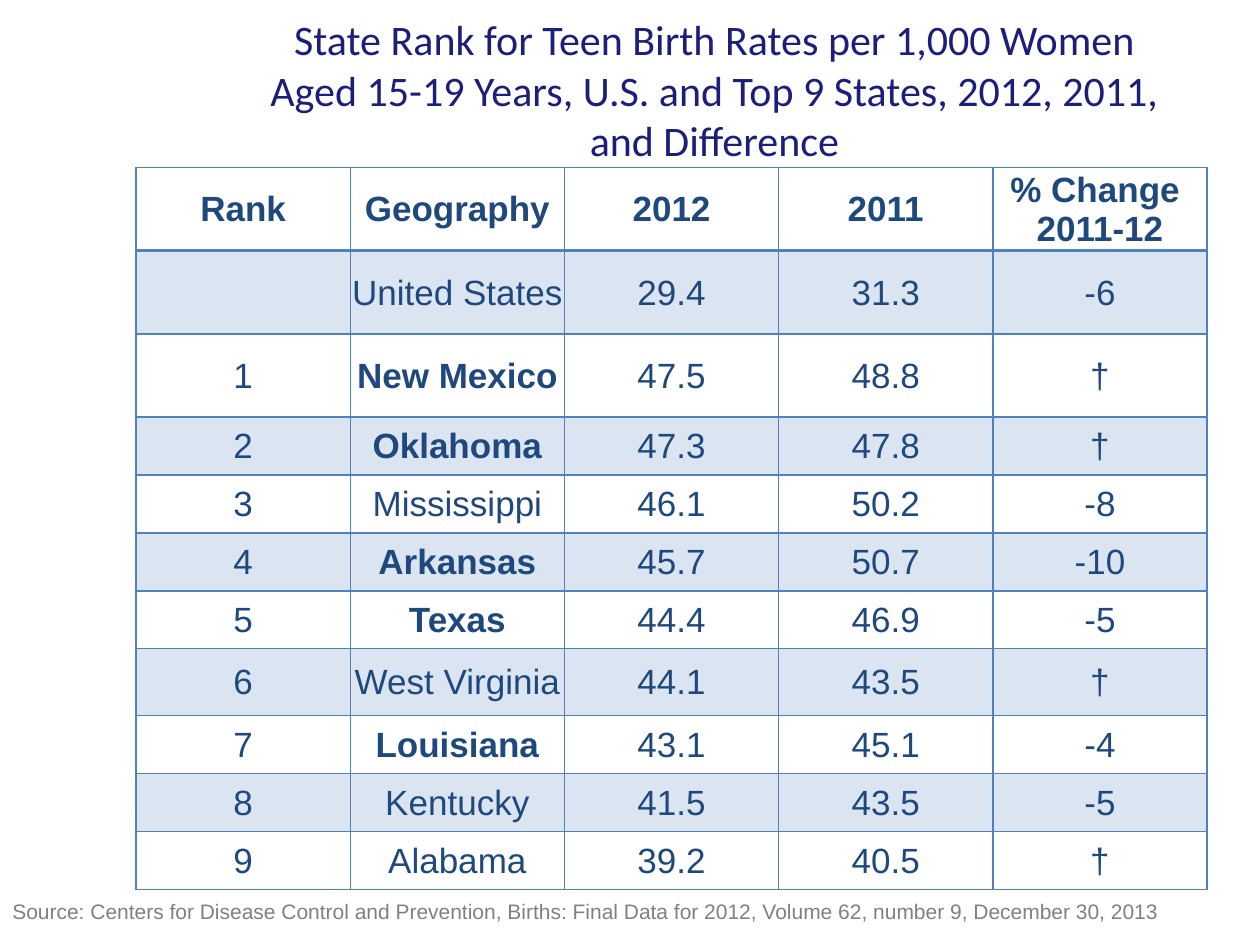
from lxml import etree
from pptx import Presentation
from pptx.dml.color import RGBColor
from pptx.enum.text import MSO_ANCHOR, MSO_AUTO_SIZE, PP_ALIGN
from pptx.oxml.ns import qn
from pptx.util import Inches, Pt

CENTER, LEFT = PP_ALIGN.CENTER, PP_ALIGN.LEFT
MIDDLE = MSO_ANCHOR.MIDDLE
NO_AUTOFIT = MSO_AUTO_SIZE.NONE
FIT_SHAPE = MSO_AUTO_SIZE.SHAPE_TO_FIT_TEXT

TITLE = ("State Rank for Teen Birth Rates per 1,000 Women Aged 15-19 Years, "
         "U.S. and Top 9 States, 2012, 2011, and Difference")
SOURCE = ("Source: Centers for Disease Control and Prevention, Births: Final Data for 2012, "
          "Volume 62, number 9, December 30, 2013")
ROWS = [
    ("Rank", "Geography", "2012", "2011", "% Change \n2011-12"),
    ("", "United States", "29.4", "31.3", "-6"),
    ("1", "New Mexico", "47.5", "48.8", "†"),
    ("2", "Oklahoma", "47.3", "47.8", "†"),
    ("3", "Mississippi", "46.1", "50.2", "-8"),
    ("4", "Arkansas", "45.7", "50.7", "-10"),
    ("5", "Texas", "44.4", "46.9", "-5"),
    ("6", "West Virginia", "44.1", "43.5", "†"),
    ("7", "Louisiana", "43.1", "45.1", "-4"),
    ("8", "Kentucky", "41.5", "43.5", "-5"),
    ("9", "Alabama", "39.2", "40.5", "†"),
]
BOLD_STATES = {"New Mexico", "Oklahoma", "Arkansas", "Texas", "Louisiana"}
ROW_HEIGHTS = [0.66] * 3 + [0.46] * 4 + [0.53] + [0.46] * 3
COLUMN_WIDTH = 1.7
BLUE, NAVY, TITLE_BLUE, GRAY = "4F81BD", "1F497D", "1B1E7A", "808080"
BAND_ALPHA = "20000"


def color(value):
    return RGBColor.from_string(value)


def write_text(text_frame, text, size, font_name, font_color, alignment, bold=False):
    text_frame.text = text
    for paragraph in text_frame.paragraphs:
        paragraph.alignment = alignment
        font = paragraph.font
        font.size, font.name, font.bold = Pt(size), font_name, bold
        font.color.rgb = color(font_color)


def add_border(cell, side, width):
    line = etree.SubElement(cell._tc.get_or_add_tcPr(), qn(f"a:ln{side}"), w=str(Pt(width)))
    fill = etree.SubElement(line, qn("a:solidFill"))
    etree.SubElement(fill, qn("a:srgbClr"), val=BLUE)


def fill_band(cell):
    cell.fill.solid()
    cell.fill.fore_color.rgb = color(BLUE)
    band_color = cell._tc.tcPr.find(qn("a:solidFill")).find(qn("a:srgbClr"))
    etree.SubElement(band_color, qn("a:alpha"), val=BAND_ALPHA)


def format_cell(cell, text, row_index):
    is_header = row_index == 0
    write_text(cell.text_frame, text, 20, "Arial", NAVY, CENTER, is_header or text in BOLD_STATES)
    cell.vertical_anchor = MIDDLE
    cell.margin_left = cell.margin_right = cell.margin_top = Inches(0.01)
    cell.margin_bottom = 0
    for side in "LRTB":
        at_header_rule = (row_index, side) in {(0, "B"), (1, "T")}
        add_border(cell, side, 2 if at_header_rule else 1)
    if row_index % 2:
        fill_band(cell)
    else:
        cell.fill.background()


def add_rate_table(slide):
    column_count = len(ROWS[0])
    frame = slide.shapes.add_table(
        len(ROWS), column_count, Inches(1.08), Inches(1.33),
        Inches(COLUMN_WIDTH * column_count), Inches(sum(ROW_HEIGHTS)))
    table = frame.table
    table.first_row = table.horz_banding = False
    for column in table.columns:
        column.width = Inches(COLUMN_WIDTH)
    for row_index, (values, height) in enumerate(zip(ROWS, ROW_HEIGHTS)):
        table.rows[row_index].height = Inches(height)
        for column_index, text in enumerate(values):
            format_cell(table.cell(row_index, column_index), text, row_index)


def main():
    presentation = Presentation()
    presentation.slide_width, presentation.slide_height = Inches(10), Inches(7.5)
    slide = presentation.slides.add_slide(presentation.slide_layouts[5])

    title = slide.shapes.title
    title.left, title.top = Inches(1.92), Inches(0.17)
    title.width, title.height = Inches(7.5), Inches(1.08)
    title.text_frame.auto_size = NO_AUTOFIT
    title.text_frame.vertical_anchor = MIDDLE
    write_text(title.text_frame, TITLE, 24, "Calibri", TITLE_BLUE, CENTER)

    add_rate_table(slide)

    source = slide.shapes.add_textbox(0, Inches(7.08), Inches(11.33), Inches(0.3))
    source.text_frame.word_wrap = True
    source.text_frame.auto_size = FIT_SHAPE
    write_text(source.text_frame, SOURCE, 12, "Arial", GRAY, LEFT)

    presentation.save("out.pptx")


if __name__ == "__main__":
    main()
